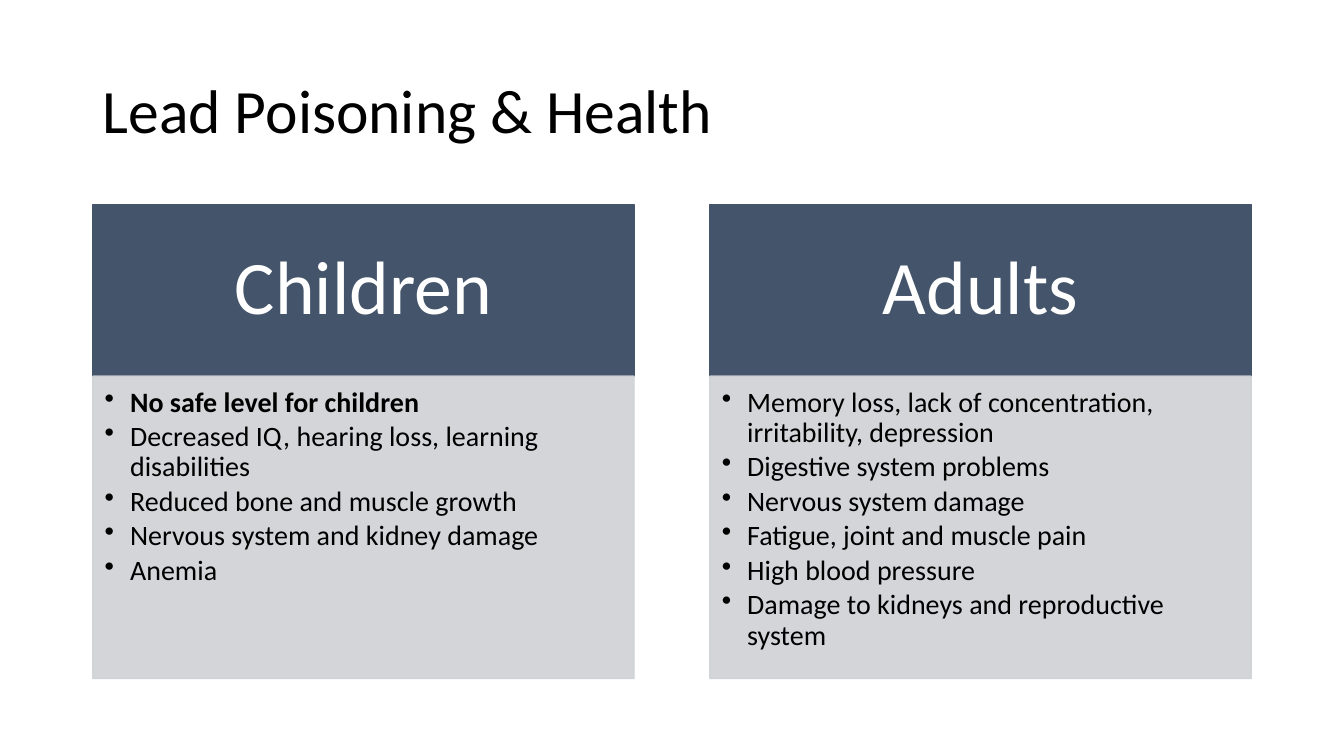
from dataclasses import dataclass

import pptx
import pptx.dml.color
import pptx.enum.shapes
import pptx.enum.text
import pptx.oxml
import pptx.oxml.ns
import pptx.util
from pptx.util import Cm

Color = pptx.dml.color.RGBColor.from_string
Pt = pptx.util.Pt
Align = pptx.enum.text.PP_ALIGN
Anchor = pptx.enum.text.MSO_ANCHOR


@dataclass(frozen=True)
class Theme:
    font: str = "Calibri"
    black: str = "000000"
    white: str = "FFFFFF"
    header: str = "44546A"
    body: str = "CFD1D4"
    title_size: int = 44
    header_size: int = 54
    body_size: int = 20


theme = Theme()


def add_panel(page, left, top, width, height, color, opacity=100):
    """Add a rectangle whose fill and outline share one colour and opacity."""
    panel = page.shapes.add_shape(
        pptx.enum.shapes.MSO_SHAPE.RECTANGLE, left, top, width, height)
    panel.shadow.inherit = False
    panel.line.width = Pt(1)
    for fill in (panel.fill, panel.line.fill):
        fill.solid()
        fill.fore_color.rgb = Color(color)
    if opacity < 100:
        for tint in panel._element.spPr.iter(pptx.oxml.ns.qn("a:srgbClr")):
            tint.append(pptx.oxml.parse_xml(
                f'<a:alpha {pptx.oxml.ns.nsdecls("a")} val="{opacity * 1000}"/>'))
    return panel


def write(box, lines, size, color, margins, anchor=Anchor.MIDDLE,
          align=Align.LEFT, space_after=0, bulleted=False):
    """Fill a box with (wording, bold) lines; margins run left, top, right, bottom."""
    frame = box.text_frame
    frame.word_wrap = True
    frame.vertical_anchor = anchor
    (frame.margin_left, frame.margin_top,
     frame.margin_right, frame.margin_bottom) = map(Cm, margins)
    for index, (wording, bold) in enumerate(lines):
        para = frame.add_paragraph() if index else frame.paragraphs[0]
        para.alignment = align
        para.line_spacing = 0.9
        para.space_after = Pt(space_after)
        if bulleted:
            properties = para._p.get_or_add_pPr()
            properties.set("marL", str(Cm(0.64)))
            properties.set("indent", str(-Cm(0.64)))
            properties.append(pptx.oxml.parse_xml(
                f'<a:buChar {pptx.oxml.ns.nsdecls("a")} char="•"/>'))
        span = para.add_run()
        span.text = wording
        span.font.name = theme.font
        span.font.size = Pt(size)
        span.font.bold = bold
        span.font.color.rgb = Color(color)


deck = pptx.Presentation()
deck.slide_width = Cm(33.87)
deck.slide_height = Cm(19.05)
page = deck.slides.add_slide(deck.slide_layouts[6])

left_edge = Cm(2.34)
title = page.shapes.add_textbox(left_edge, Cm(1.01), Cm(29.21), Cm(3.68))
write(title, [("Lead Poisoning & Health", False)], theme.title_size,
      theme.black, (0.25, 0.13, 0.25, 0.13))

columns = [
    ("Children", [
        ("No safe level for children", True),
        ("Decreased IQ, hearing loss, learning disabilities", False),
        ("Reduced bone and muscle growth", False),
        ("Nervous system and kidney damage", False),
        ("Anemia", False),
    ]),
    ("Adults", [
        ("Memory loss, lack of concentration, irritability, depression", False),
        ("Digestive system problems", False),
        ("Nervous system damage", False),
        ("Fatigue, joint and muscle pain", False),
        ("High blood pressure", False),
        ("Damage to kidneys and reproductive system", False),
    ]),
]
column_width = Cm(13.64)
column_step = Cm(15.55)
header_top = Cm(5.16)
header_height = Cm(4.32)
body_height = Cm(7.62)

for number, (group, effects) in enumerate(columns):
    left = left_edge + number * column_step
    header = add_panel(page, left, header_top, column_width, header_height,
                       theme.header)
    write(header, [(group, False)], theme.header_size, theme.white,
          (1.07, 0.61, 1.07, 0.61), align=Align.CENTER)
    body = add_panel(page, left, header_top + header_height, column_width,
                     body_height, theme.body, opacity=90)
    write(body, effects, theme.body_size, theme.black, (0.3, 0.3, 0.41, 0.43),
          anchor=Anchor.TOP, space_after=3, bulleted=True)

deck.save("out.pptx")
